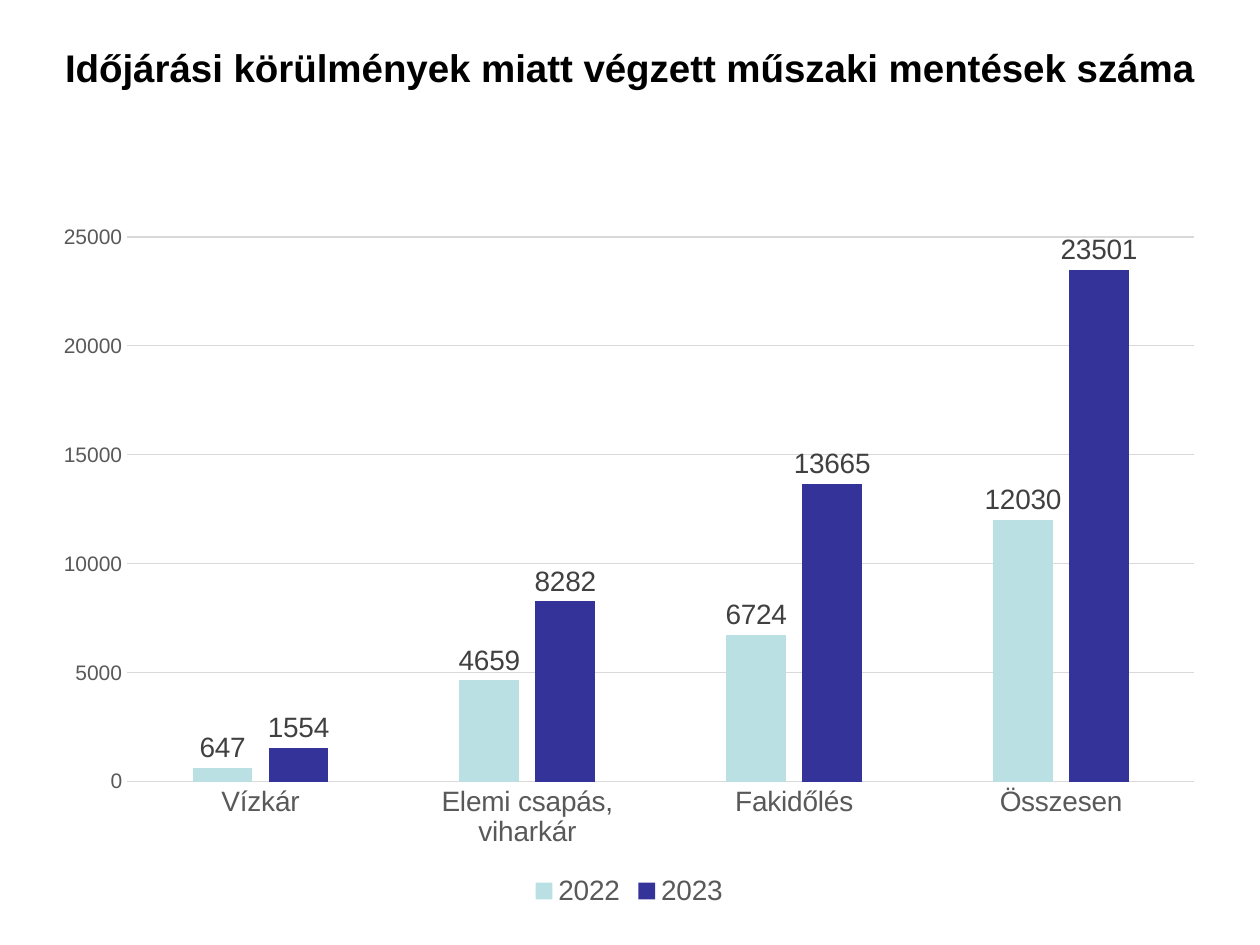
from pptx import Presentation
from pptx.chart.data import CategoryChartData
from pptx.dml.color import RGBColor
from pptx.enum.chart import (XL_CHART_TYPE, XL_LABEL_POSITION,
                             XL_LEGEND_POSITION, XL_TICK_MARK)
from pptx.enum.text import MSO_ANCHOR, PP_ALIGN
from pptx.util import Pt

COLUMNS = XL_CHART_TYPE.COLUMN_CLUSTERED
OUTSIDE_END = XL_LABEL_POSITION.OUTSIDE_END
LEGEND_BOTTOM = XL_LEGEND_POSITION.BOTTOM
NO_TICK = XL_TICK_MARK.NONE
MIDDLE = MSO_ANCHOR.MIDDLE
CENTER = PP_ALIGN.CENTER

TITLE_ONLY_LAYOUT = 5
FONT = "Arial"
COLORS = {
    "title": "000000",
    "axis": "595959",
    "label": "404040",
    "grid": "D9D9D9",
    "2022": "BBE0E3",
    "2023": "333399",
}
CATEGORIES = ["Vízkár", "Elemi csapás, viharkár", "Fakidőlés", "Összesen"]
RESCUES = {
    "2022": [647, 4659, 6724, 12030],
    "2023": [1554, 8282, 13665, 23501],
}


def color(name):
    return RGBColor.from_string(COLORS[name])


def format_font(font, size, color_name, bold=False):
    font.name = FONT
    font.size = Pt(size)
    font.bold = bold
    font.color.rgb = color(color_name)


def format_line(line, color_name):
    line.color.rgb = color(color_name)
    line.width = Pt(0.75)


def write_text(shape, text, size, color_name, bold=False, align=CENTER):
    frame = shape.text_frame
    frame.word_wrap = True
    frame.vertical_anchor = MIDDLE
    paragraph = frame.paragraphs[0]
    paragraph.alignment = align
    run = paragraph.add_run()
    run.text = text
    format_font(run.font, size, color_name, bold)


def add_title(slide, text):
    title = slide.shapes.title
    title.left, title.top = Pt(0), Pt(21.6)
    title.width, title.height = Pt(720), Pt(34)
    write_text(title, text, size=22, color_name="title", bold=True)


def format_axes(chart):
    category_axis, value_axis = chart.category_axis, chart.value_axis
    for axis, size in ((category_axis, 16), (value_axis, 12)):
        axis.major_tick_mark = axis.minor_tick_mark = NO_TICK
        format_font(axis.tick_labels.font, size, "axis")
    format_line(category_axis.format.line, "grid")
    value_axis.format.line.fill.background()
    value_axis.maximum_scale = 25000
    value_axis.minimum_scale = 0
    value_axis.major_unit = 5000
    format_line(value_axis.major_gridlines.format.line, "grid")


def format_series(series):
    series.smooth = False
    series.invert_if_negative = False
    series.format.fill.solid()
    series.format.fill.fore_color.rgb = color(series.name)
    labels = series.data_labels
    labels.show_value = True
    labels.position = OUTSIDE_END
    format_font(labels.font, 16, "label")


def add_column_chart(slide):
    data = CategoryChartData()
    data.categories = CATEGORIES
    for year, values in RESCUES.items():
        data.add_series(year, values)
    chart = slide.shapes.add_chart(
        COLUMNS, Pt(23), Pt(121), Pt(673), Pt(400), data).chart
    format_font(chart.font, 10, "title")
    chart.has_title = False
    chart.has_legend = True
    chart.legend.position = LEGEND_BOTTOM
    chart.legend.include_in_layout = False
    format_font(chart.legend.font, 16, "axis")
    format_axes(chart)
    plot = chart.plots[0]
    plot.vary_by_categories = False
    plot.gap_width = 219
    plot.overlap = -27
    for series in plot.series:
        format_series(series)


def main():
    presentation = Presentation()
    presentation.slide_width, presentation.slide_height = Pt(720), Pt(540)
    layout = presentation.slide_layouts[TITLE_ONLY_LAYOUT]
    slide = presentation.slides.add_slide(layout)
    add_title(slide, "Időjárási körülmények miatt végzett műszaki mentések száma")
    add_column_chart(slide)
    presentation.save("out.pptx")


if __name__ == "__main__":
    main()
